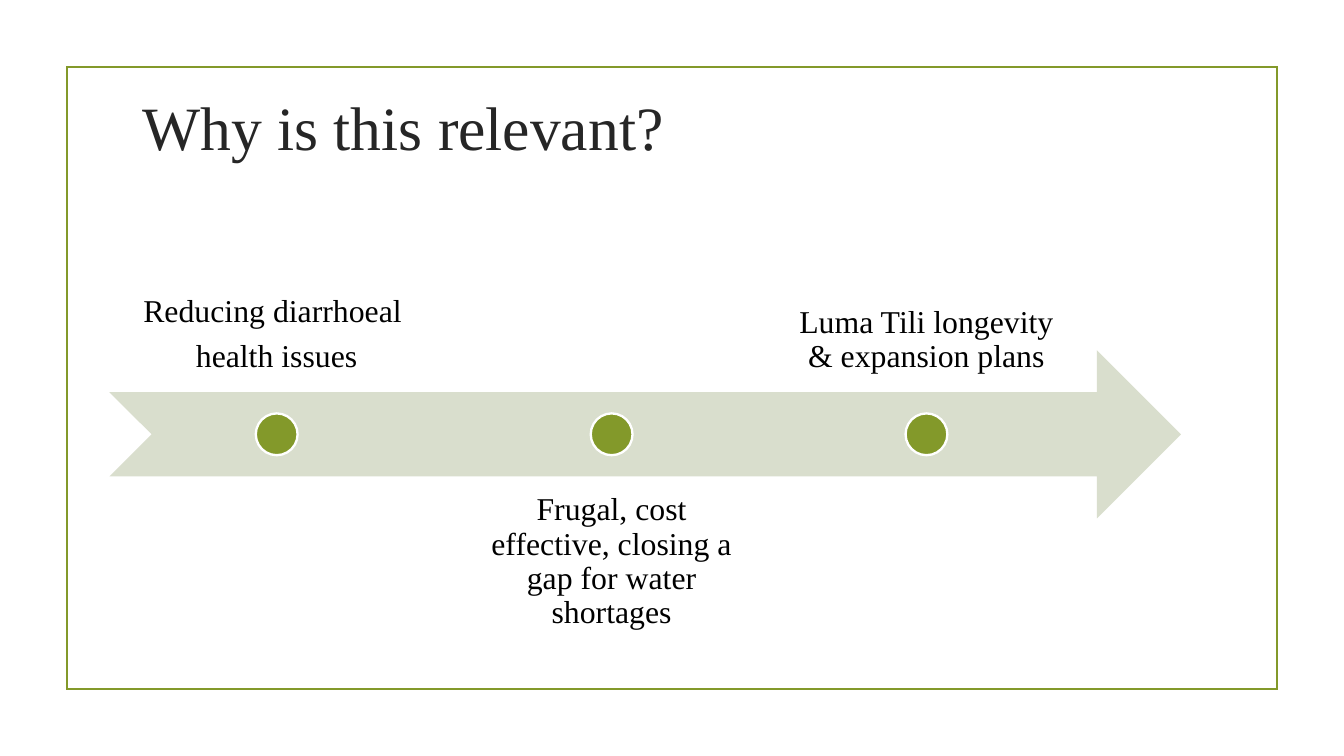
from dataclasses import dataclass

from lxml import etree
from pptx import Presentation
from pptx.dml.color import RGBColor
from pptx.enum.shapes import MSO_SHAPE
from pptx.enum.text import MSO_ANCHOR, PP_ALIGN
from pptx.oxml.ns import qn
from pptx.util import Cm, Pt

RECTANGLE = MSO_SHAPE.RECTANGLE
ARROW = MSO_SHAPE.NOTCHED_RIGHT_ARROW
OVAL = MSO_SHAPE.OVAL
TOP, BOTTOM = MSO_ANCHOR.TOP, MSO_ANCHOR.BOTTOM
LEFT, CENTER = PP_ALIGN.LEFT, PP_ALIGN.CENTER

FONT = "Times New Roman"
GREEN, PALE, WHITE = "83992A", "D9DECD", "FFFFFF"
BLACK, CHARCOAL = "000000", "262626"

# Timeline measures in centimetres
ARROW_LEFT, ARROW_TOP, ARROW_WIDTH, BAND = 2.07, 6.62, 20.25, 3.18
DOT = 0.79
ABOVE_TOP, BELOW_TOP = 4.23, 9.0


@dataclass
class Milestone:
    center: float
    width: float
    lines: list[str]
    above: bool


MILESTONES = [
    Milestone(5.23, 6.32, ["Reducing diarrhoeal ", "health issues"], True),
    Milestone(11.56, 5.8, ["Frugal, cost effective, closing a gap for water shortages"], False),
    Milestone(17.51, 5.56, ["Luma Tili longevity & expansion plans"], True),
]


def color(value: str) -> RGBColor:
    return RGBColor.from_string(value)


def add_shape(slide, kind, left: float, top: float, width: float, height: float,
              fill: str | None = None, line: str | None = None):
    shape = slide.shapes.add_shape(kind, Cm(left), Cm(top), Cm(width), Cm(height))
    shape.shadow.inherit = False
    if fill:
        shape.fill.solid()
        shape.fill.fore_color.rgb = color(fill)
    else:
        shape.fill.background()
    if line:
        shape.line.color.rgb = color(line)
        shape.line.width = Pt(1.25)
        # Sharp corners
        outline = shape.line._get_or_add_ln()
        etree.SubElement(outline, qn("a:miter"), lim="800000")
    else:
        shape.line.fill.background()
    return shape


def add_text(slide, lines: list[str], left: float, top: float, width: float, height: float,
             size: float, text_color: str, inset: float, anchor=TOP, align=LEFT,
             line_spacing: float = 1.0, space_after: float = 0) -> None:
    frame = slide.shapes.add_textbox(Cm(left), Cm(top), Cm(width), Cm(height)).text_frame
    frame.word_wrap = True
    frame.vertical_anchor = anchor
    frame.margin_left = frame.margin_right = Cm(inset)
    frame.margin_top = frame.margin_bottom = Cm(inset)
    frame.text = "\n".join(lines)
    for paragraph in frame.paragraphs:
        paragraph.alignment = align
        paragraph.line_spacing = line_spacing
        paragraph.space_after = Pt(space_after)
        paragraph.font.name = FONT
        paragraph.font.size = Pt(size)
        paragraph.font.color.rgb = color(text_color)


def add_milestone(slide, milestone: Milestone) -> None:
    add_text(slide, milestone.lines, milestone.center - milestone.width / 2,
             ABOVE_TOP if milestone.above else BELOW_TOP, milestone.width, BAND,
             17, BLACK, 0.33, BOTTOM if milestone.above else TOP, CENTER, 0.9, 6)
    add_shape(slide, OVAL, milestone.center - DOT / 2, ARROW_TOP + (BAND - DOT) / 2,
              DOT, DOT, GREEN, WHITE)


def main() -> None:
    presentation = Presentation()
    presentation.slide_width, presentation.slide_height = Cm(25.4), Cm(14.29)
    slide = presentation.slides.add_slide(presentation.slide_layouts[6])

    # Frame and title
    add_shape(slide, RECTANGLE, 1.27, 1.27, 22.86, 11.76, line=GREEN)
    add_text(slide, ["Why is this relevant?"], 2.44, 1.43, 14.58, 1.96, 33, CHARCOAL, 0.25)

    # Timeline
    add_shape(slide, ARROW, ARROW_LEFT, ARROW_TOP, ARROW_WIDTH, BAND, PALE)
    for milestone in MILESTONES:
        add_milestone(slide, milestone)

    presentation.save("out.pptx")


if __name__ == "__main__":
    main()
